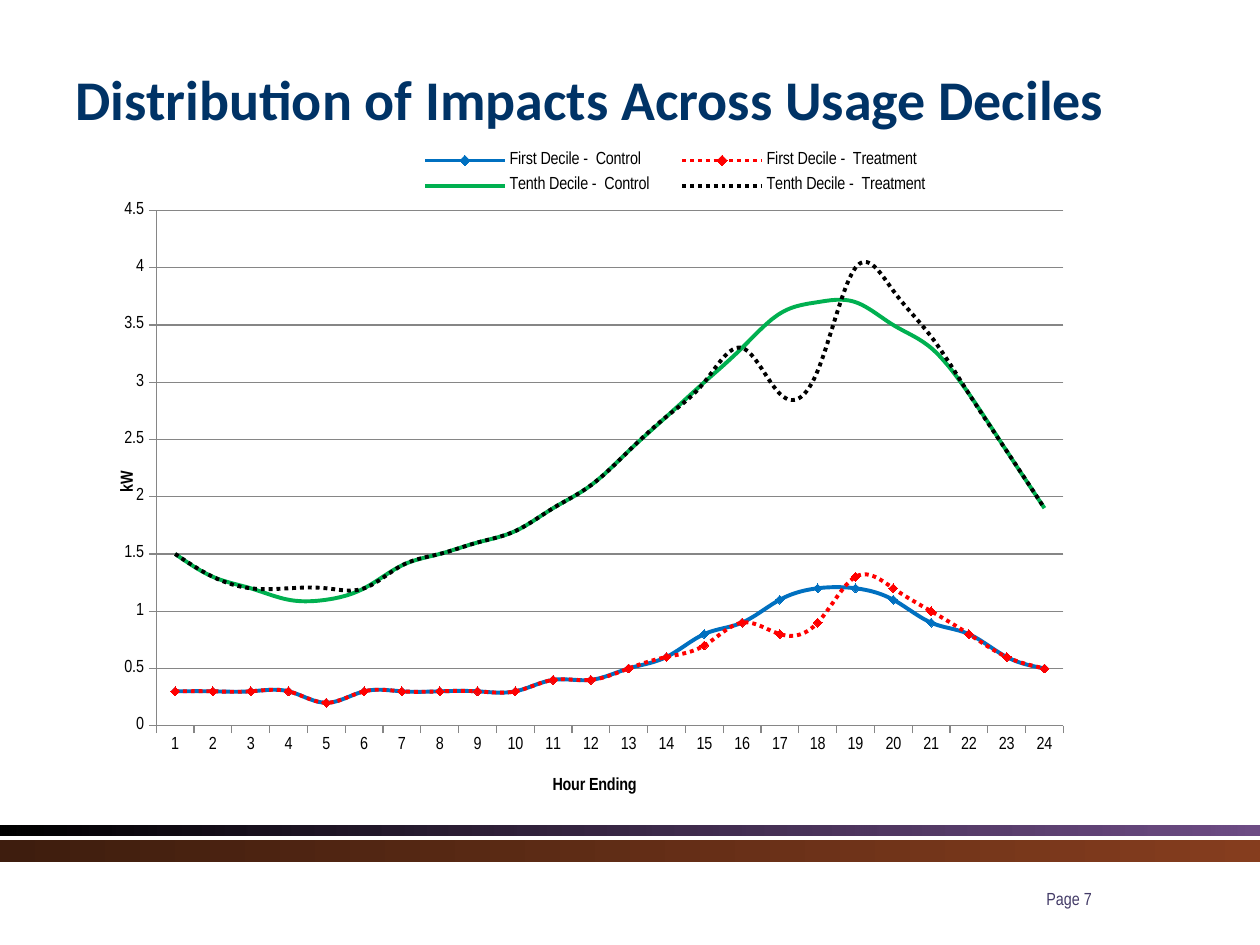
import pptx
import pptx.chart.data
import pptx.dml.color
import pptx.enum.chart
import pptx.enum.dml
import pptx.enum.shapes
import pptx.enum.text
import pptx.oxml
import pptx.oxml.ns
import pptx.util

Inches = pptx.util.Inches
Pt = pptx.util.Pt
RGBColor = pptx.dml.color.RGBColor
Mark = pptx.enum.chart.XL_MARKER_STYLE
qn = pptx.oxml.ns.qn

BLACK = RGBColor(0x00, 0x00, 0x00)
NAVY = RGBColor(0x00, 0x33, 0x66)
PURPLE = RGBColor(0x54, 0x2D, 0x6F)
SLATE = RGBColor(0x43, 0x3B, 0x67)
BROWN = RGBColor(0x3E, 0x1D, 0x0E)
RUST = RGBColor(0x85, 0x3D, 0x1E)
GRAY = RGBColor(0x86, 0x86, 0x86)
BLUE = RGBColor(0x00, 0x70, 0xC0)
RED = RGBColor(0xFF, 0x00, 0x00)
GREEN = RGBColor(0x00, 0xB0, 0x50)
NARROW = "Arial Narrow"

SERIES = [
    ("First Decile -  Control", BLUE, False, True,
     [0.3, 0.3, 0.3, 0.3, 0.2, 0.3, 0.3, 0.3, 0.3, 0.3, 0.4, 0.4,
      0.5, 0.6, 0.8, 0.9, 1.1, 1.2, 1.2, 1.1, 0.9, 0.8, 0.6, 0.5]),
    ("First Decile -  Treatment", RED, True, True,
     [0.3, 0.3, 0.3, 0.3, 0.2, 0.3, 0.3, 0.3, 0.3, 0.3, 0.4, 0.4,
      0.5, 0.6, 0.7, 0.9, 0.8, 0.9, 1.3, 1.2, 1, 0.8, 0.6, 0.5]),
    ("Tenth Decile -  Control", GREEN, False, False,
     [1.5, 1.3, 1.2, 1.1, 1.1, 1.2, 1.4, 1.5, 1.6, 1.7, 1.9, 2.1,
      2.4, 2.7, 3, 3.3, 3.6, 3.7, 3.7, 3.5, 3.3, 2.9, 2.4, 1.9]),
    ("Tenth Decile -  Treatment", BLACK, True, False,
     [1.5, 1.3, 1.2, 1.2, 1.2, 1.2, 1.4, 1.5, 1.6, 1.7, 1.9, 2.1,
      2.4, 2.7, 3, 3.3, 2.9, 3.1, 4, 3.8, 3.4, 2.9, 2.4, 1.9]),
]


def set_font(font, name, size, color, bold=False):
    """Set the face, size, colour and weight of a font."""
    font.name = name
    font.size = Pt(size)
    font.bold = bold
    font.color.rgb = color


def add_bar(slide, top, height, start, end, alpha=None):
    """Add a full-width band that fades from left to right."""
    bar = slide.shapes.add_shape(
        pptx.enum.shapes.MSO_SHAPE.RECTANGLE,
        0, Inches(top), Inches(10), Inches(height))
    bar.shadow.inherit = False
    bar.line.fill.background()
    bar.fill.gradient()
    bar.fill.gradient_angle = 0
    for stop, color in zip(bar.fill.gradient_stops, (start, end)):
        stop.color.rgb = color
    if alpha:
        last = bar._element.xpath(".//a:gs/a:srgbClr")[-1]
        last.append(pptx.oxml.parse_xml(
            f'<a:alpha {pptx.oxml.ns.nsdecls("a")} val="{alpha * 1000}"/>'))


def add_text(slide, box, text, align, anchor, *style):
    """Add a box with one line of text."""
    frame = slide.shapes.add_textbox(*map(Inches, box)).text_frame
    frame.word_wrap = True
    frame.vertical_anchor = anchor
    line = frame.paragraphs[0]
    line.text = text
    line.alignment = align
    set_font(line.font, *style)


def place(node, index, left, top, size=None, inner=False):
    """Give a chart part a manual place in fractions of the chart."""
    for old in node.findall(qn("c:layout")):
        node.remove(old)
    tags = [("layoutTarget", "inner")] if inner else []
    tags += [("xMode", "edge"), ("yMode", "edge"), ("x", left), ("y", top)]
    if size:
        tags += zip("wh", size)
    body = "".join(f'<c:{tag} val="{val}"/>' for tag, val in tags)
    node.insert(index, pptx.oxml.parse_xml(
        f'<c:layout {pptx.oxml.ns.nsdecls("c")}>'
        f'<c:manualLayout>{body}</c:manualLayout></c:layout>'))


def style_axis(axis, title, left, top, turn=0):
    """Set the title, ticks and line of an axis."""
    axis.has_title = True
    frame = axis.axis_title.text_frame
    frame.text = title
    set_font(frame.paragraphs[0].font, NARROW, 10, BLACK, True)
    frame._txBody.find(qn("a:bodyPr")).set("rot", str(turn * 60000))
    place(axis.axis_title._element, 1, left, top)
    axis.major_tick_mark = pptx.enum.chart.XL_TICK_MARK.OUTSIDE
    axis.format.line.color.rgb = GRAY


def style_line(line, color, dotted, marked):
    """Set the stroke and marker of a series."""
    line.smooth = True
    stroke = line.format.line
    stroke.color.rgb = color
    stroke.width = Pt(2.25)
    if dotted:
        stroke.dash_style = pptx.enum.dml.MSO_LINE.ROUND_DOT
    line.marker.style = Mark.DIAMOND if marked else Mark.NONE
    if marked:
        line.marker.size = 5
        line.marker.format.fill.solid()
        line.marker.format.fill.fore_color.rgb = color
        line.marker.format.line.color.rgb = color


def add_graph(slide):
    """Add the line chart of hourly load."""
    data = pptx.chart.data.CategoryChartData()
    data.categories = [str(hour) for hour in range(1, 25)]
    for name, *_, vals in SERIES:
        data.add_series(name, vals)
    chart = slide.shapes.add_chart(
        pptx.enum.chart.XL_CHART_TYPE.LINE_MARKERS,
        Inches(0.92), Inches(1.08), Inches(8), Inches(5.38), data).chart
    set_font(chart.font, NARROW, 10, BLACK)
    chart.has_title = False
    chart.has_legend = True
    chart.legend.position = pptx.enum.chart.XL_LEGEND_POSITION.TOP
    chart.legend.include_in_layout = False
    place(chart.legend._element, 1, 0.28, 0.01, (0.55, 0.09))
    plot = chart._chartSpace.find(".//" + qn("c:plotArea"))
    place(plot, 0, 0.04, 0.11, (0.9, 0.76), True)
    style_axis(chart.category_axis, "Hour Ending", 0.43, 0.94)
    axis = chart.value_axis
    style_axis(axis, "kW", 0, 0.49, -90)
    axis.minimum_scale = 0
    axis.maximum_scale = 4.5
    axis.major_unit = 0.5
    axis.has_major_gridlines = True
    axis.major_gridlines.format.line.color.rgb = GRAY
    axis.tick_labels.number_format = "General"
    axis.tick_labels.number_format_is_linked = False
    chart.plots[0].vary_by_categories = False
    for line, (_, color, dotted, marked, _) in zip(chart.plots[0].series, SERIES):
        style_line(line, color, dotted, marked)


def main():
    """Build the slide and save it."""
    deck = pptx.Presentation()
    deck.slide_width = Inches(10)
    deck.slide_height = Inches(7.5)
    slide = deck.slides.add_slide(deck.slide_layouts[6])
    align = pptx.enum.text.PP_ALIGN
    anchor = pptx.enum.text.MSO_ANCHOR
    add_bar(slide, 6.55, 0.08, BLACK, PURPLE, 85)
    add_bar(slide, 6.67, 0.17, BROWN, RUST)
    add_text(slide, (0.5, 0.3, 9, 0.95),
             "Distribution of Impacts Across Usage Deciles",
             align.LEFT, anchor.MIDDLE, "Calibri", 32, NAVY, True)
    add_text(slide, (7.42, 7, 2.13, 0.22), "Page 7",
             align.CENTER, anchor.TOP, NARROW, 10, SLATE)
    add_graph(slide)
    deck.save("out.pptx")


if __name__ == "__main__":
    main()
